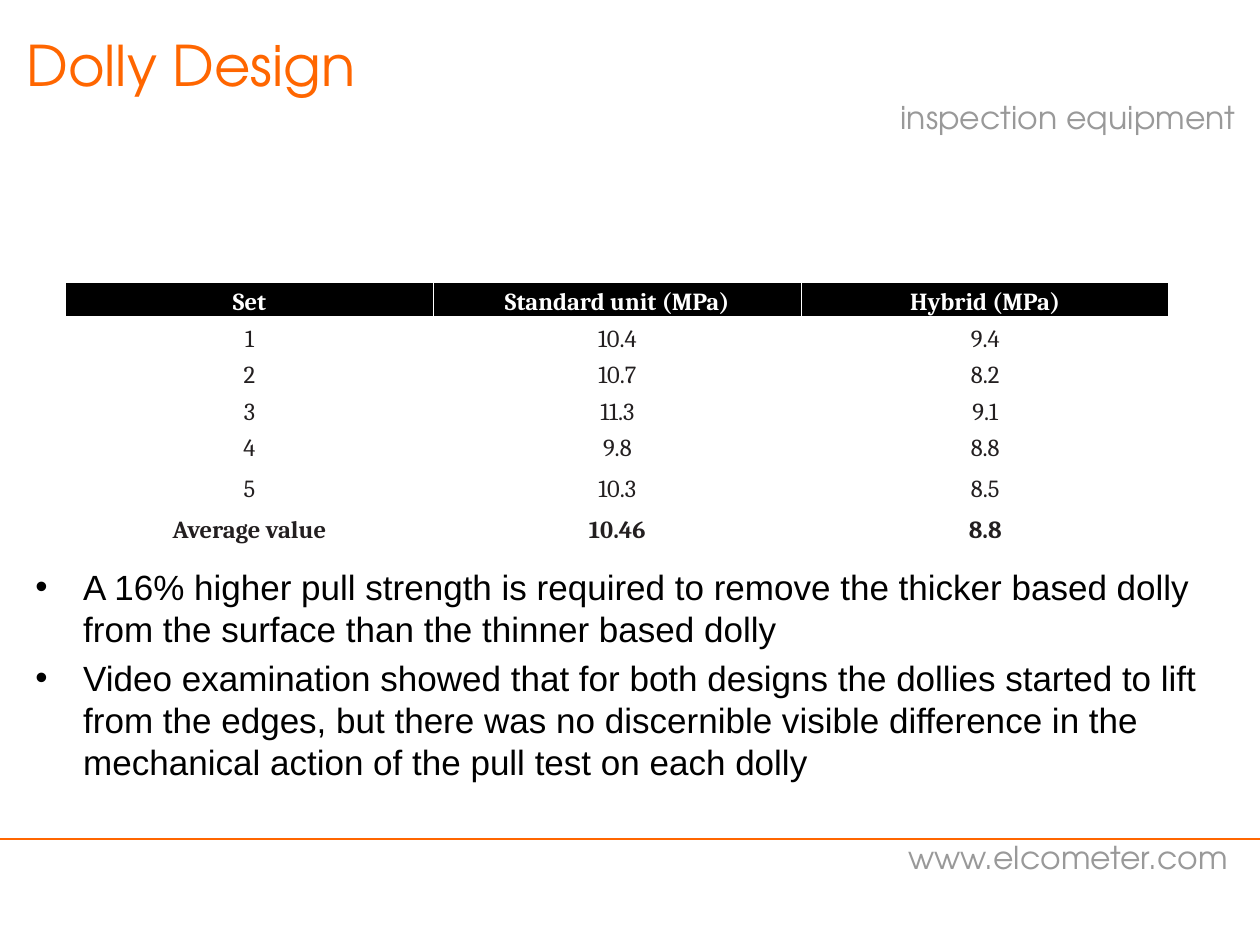
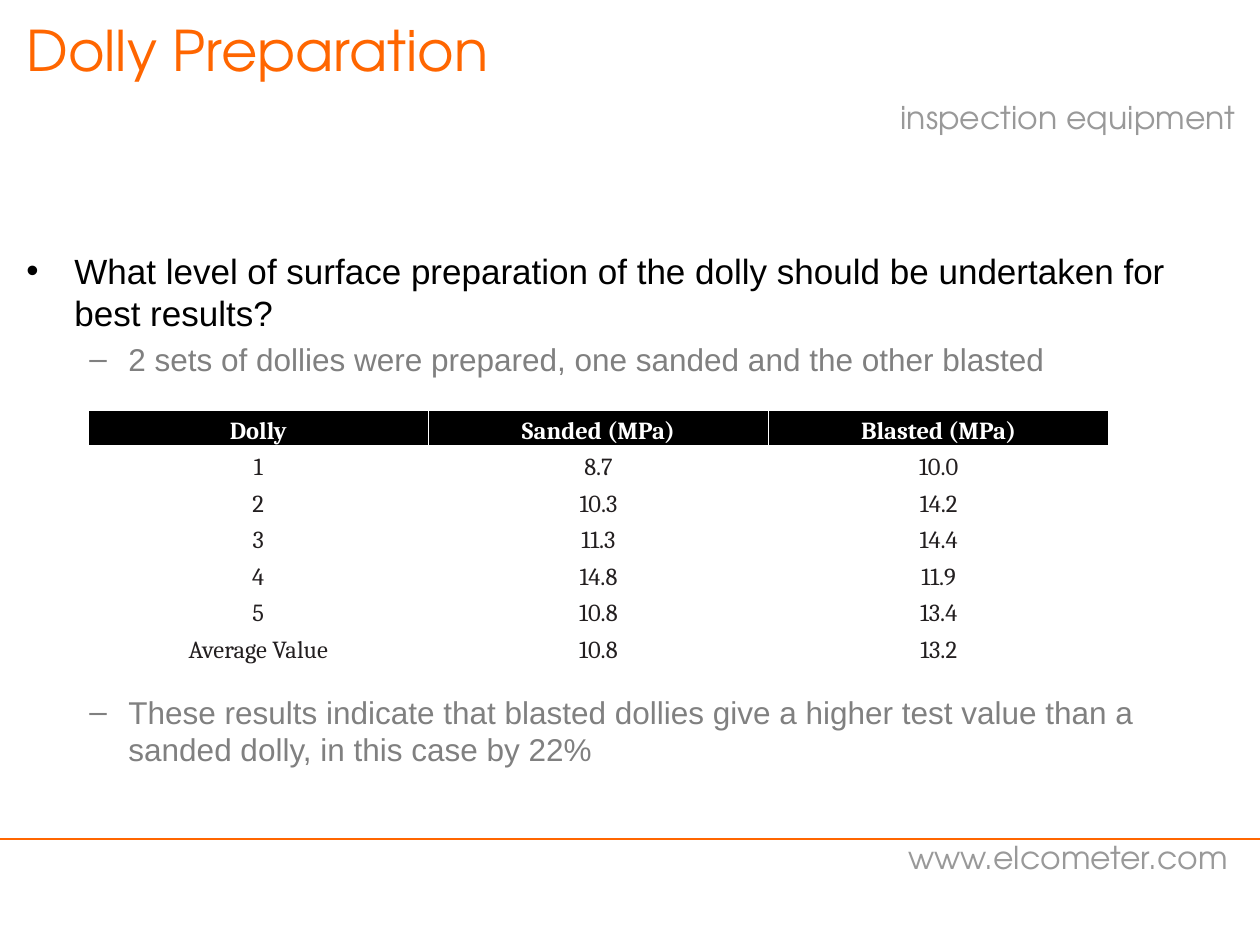
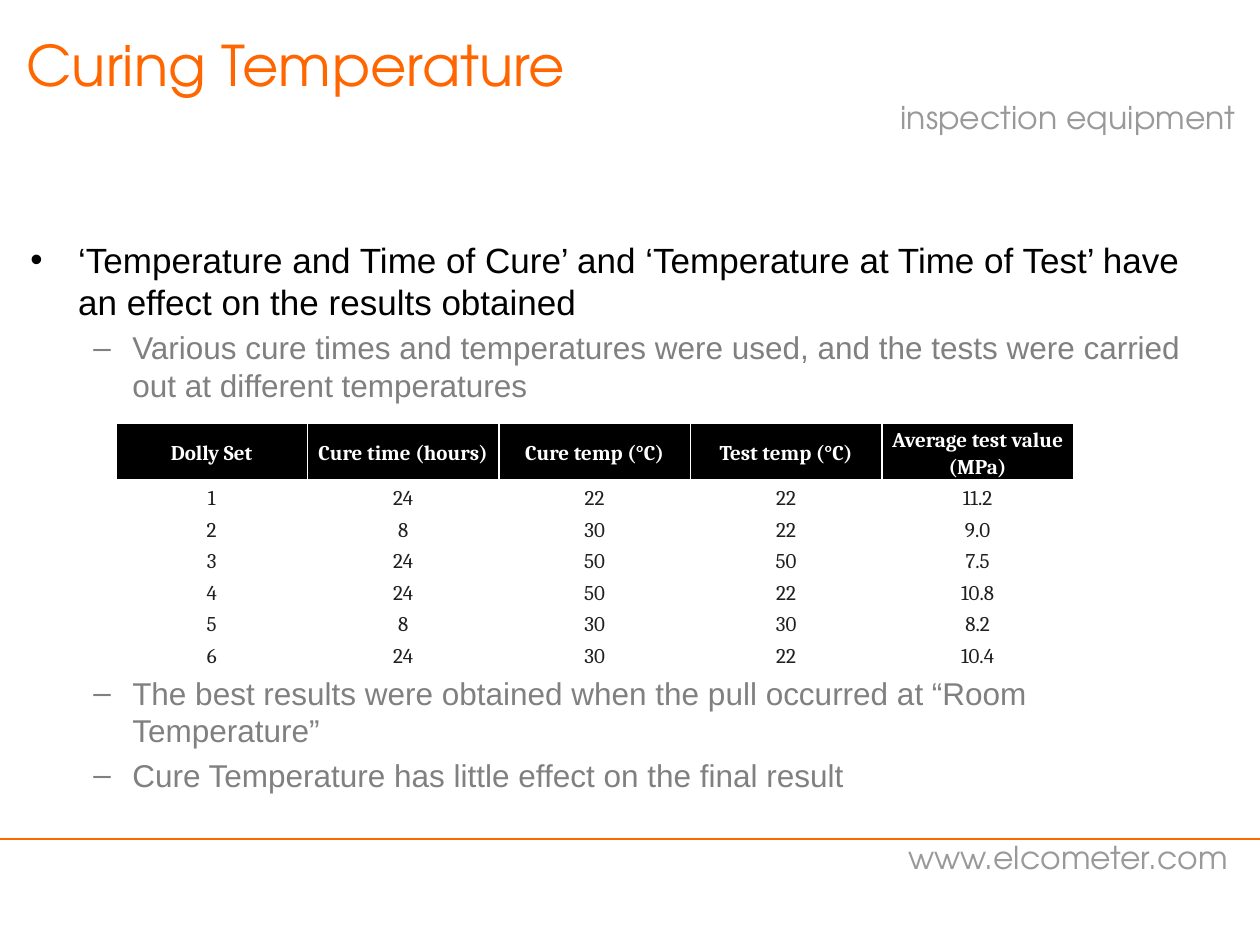
import pptx
import pptx.util
import pptx.dml.color
import pptx.enum.shapes
import pptx.enum.text
import pptx.oxml
import pptx.oxml.ns

Inch, Pt = pptx.util.Inches, pptx.util.Pt
MSO, ALIGN = pptx.enum.text.MSO_ANCHOR, pptx.enum.text.PP_ALIGN

# Shared look
WIDE, HIGH = 10, 7.5
ORANGE, GREY, SUB, BLACK, WHITE, INK = (
    "FF6600", "999999", "808080", "000000", "FFFFFF", "231F20")
BRAND, BODY, SERIF = "TeX Gyre Adventor", "Arial", "Cambria"
RULE = 6.66
LABELS = [("inspection equipment", 7.05, 0.73), ("www.elcometer.com", 7.11, 6.6)]
# Per list level: bullet, left indent, hanging indent, size, colour
LEVELS = [("•", 0.38, 0.38, 20, BLACK), ("–", 0.81, 0.31, 18, SUB)]

# Content: each point is (level, text, gap before in points or None for 20 %)
SLIDES = [
    dict(
        title="Dolly Design", head=(0.11, 0.19, 9.79, 1.18),
        body=(0.18, 2.34, 9.61, 4.96), drop=2.15,
        points=[
            (0, "A 16% higher pull strength is required to remove the thicker based "
                "dolly from the surface than the thinner based dolly", None),
            (0, "Video examination showed that for both designs the dollies started "
                "to lift from the edges, but there was no discernible visible "
                "difference in the mechanical action of the pull test on each dolly",
             None)],
        at=(0.52, 2.24), col=2.92, rows=[0.29] * 5 + [0.36, 0.29], size=14, total=True,
        cells=[("Set", "Standard unit (MPa)", "Hybrid (MPa)"),
               ("1", "10.4", "9.4"), ("2", "10.7", "8.2"), ("3", "11.3", "9.1"),
               ("4", "9.8", "8.8"), ("5", "10.3", "8.5"),
               ("Average value", "10.46", "8.8")]),
    dict(
        title="Dolly Preparation", head=(0.11, 0.07, 9.79, 0.84),
        body=(0.11, 1.93, 9.61, 4.48), drop=0.05,
        points=[
            (0, "What level of surface preparation of the dolly should be undertaken "
                "for best results?", None),
            (1, "2 sets of dollies were prepared, one sanded and the other blasted",
             None),
            (1, "These results indicate that blasted dollies give a higher test value "
                "than a sanded dolly, in this case by 22%", 180)],
        at=(0.7, 3.26), col=2.7, rows=[0.29] * 7, size=14, total=False,
        cells=[("Dolly", "Sanded (MPa)", "Blasted (MPa)"),
               ("1", "8.7", "10.0"), ("2", "10.3", "14.2"), ("3", "11.3", "14.4"),
               ("4", "14.8", "11.9"), ("5", "10.8", "13.4"),
               ("Average Value", "10.8", "13.2")]),
    dict(
        title="Curing Temperature", head=(0.11, 0.19, 9.79, 1.18),
        body=(0.14, 1.84, 9.61, 4.96), drop=0.05,
        points=[
            (0, "‘Temperature and Time of Cure’ and ‘Temperature at Time of Test’ "
                "have an effect on the results obtained", None),
            (1, "Various cure times and temperatures were used, and the tests were "
                "carried out at different temperatures", None),
            (1, "The best results were obtained when the pull occurred at “Room "
                "Temperature”", 154),
            (1, "Cure Temperature has little effect on the final result", None)],
        at=(0.92, 3.36), col=1.52, rows=[0.46] + [0.25] * 6, size=12, total=False,
        cells=[("Dolly Set", "Cure time (hours)", "Cure temp (°C)",
                "Test temp (°C)", "Average test value (MPa)"),
               ("1", "24", "22", "22", "11.2"), ("2", "8", "30", "22", "9.0"),
               ("3", "24", "50", "50", "7.5"), ("4", "24", "50", "22", "10.8"),
               ("5", "8", "30", "30", "8.2"), ("6", "24", "30", "22", "10.4")]),
]


def color(hue):
    return pptx.dml.color.RGBColor.from_string(hue)


def style(para, face, size, hue, bold=False):
    for run in para.runs:
        font = run.font
        font.name, font.size, font.bold = face, Pt(size), bold
        font.color.rgb = color(hue)


def place(shape, box):
    shape.left, shape.top, shape.width, shape.height = map(Inch, box)


def node(tag, home, **attrs):
    item = pptx.oxml.parse_xml(f"<a:{tag} {pptx.oxml.ns.nsdecls('a')}/>")
    for key, value in attrs.items():
        item.set(key, str(value))
    home.append(item)
    return item


def add_frame(slide):
    """Tagline, footer rule and web address."""
    for text, left, top in LABELS:
        box = slide.shapes.add_textbox(*map(Inch, (left, top, 2.97, 0.54)))
        box.text_frame.word_wrap = True
        box.text_frame.text = text
        style(box.text_frame.paragraphs[0], BRAND, 18, GREY)
    rule = slide.shapes.add_connector(
        pptx.enum.shapes.MSO_CONNECTOR.STRAIGHT,
        Inch(WIDE), Inch(RULE), Inch(0), Inch(RULE))
    rule.line.color.rgb = color(ORANGE)
    rule.line.width = Pt(0.75)
    node("effectLst", rule.element.spPr)


def add_title(slide, text, box):
    title = slide.shapes.title
    place(title, box)
    frame = title.text_frame
    frame.text = text
    frame.auto_size = pptx.enum.text.MSO_AUTO_SIZE.NONE
    frame.vertical_anchor = MSO.TOP
    frame.paragraphs[0].alignment = ALIGN.LEFT
    style(frame.paragraphs[0], BRAND, 32, ORANGE)


def add_points(slide, points, box, drop):
    body = slide.placeholders[1]
    place(body, box)
    frame = body.text_frame
    frame.auto_size = pptx.enum.text.MSO_AUTO_SIZE.NONE
    frame.margin_top = Inch(drop)
    for i, (level, text, gap) in enumerate(points):
        para = frame.add_paragraph() if i else frame.paragraphs[0]
        para.text = text
        para.level = level
        mark, left, hang, size, hue = LEVELS[level]
        props = para._p.get_or_add_pPr()
        props.set("marL", str(Inch(left)))
        props.set("indent", str(-Inch(hang)))
        node("buChar", props, char=mark)
        para.space_before = Pt((gap or size * 0.2) if i else 0)
        style(para, BODY, size, hue)


def add_border(cell):
    props = cell._tc.get_or_add_tcPr()
    for side, width in zip("LRTB", (1, 1, 1, 3)):
        line = node("ln" + side, props, w=Pt(width))
        node("srgbClr", node("solidFill", line), val=WHITE)


def add_grid(slide, cells, at, col, rows, size, total):
    count = len(cells[0])
    table = slide.shapes.add_table(
        len(cells), count, *map(Inch, (*at, col * count, sum(rows)))).table
    table.horz_banding = False
    for part in table.columns:
        part.width = Inch(col)
    for r, (tall, texts) in enumerate(zip(rows, cells)):
        table.rows[r].height = Inch(tall)
        head = r == 0
        bold = head or (total and r == len(cells) - 1)
        for c, text in enumerate(texts):
            cell = table.cell(r, c)
            cell.text = text
            cell.vertical_anchor = MSO.MIDDLE
            cell.margin_left = cell.margin_right = Inch(0.07)
            cell.margin_top = cell.margin_bottom = 0
            if head:
                add_border(cell)
                cell.fill.solid()
                cell.fill.fore_color.rgb = color(BLACK)
            else:
                cell.fill.background()
            para = cell.text_frame.paragraphs[0]
            para.alignment = ALIGN.CENTER
            para.line_spacing = 1.15
            style(para, SERIF, size, WHITE if head else INK, bold)


def main():
    deck = pptx.Presentation()
    deck.slide_width, deck.slide_height = Inch(WIDE), Inch(HIGH)
    for page in SLIDES:
        slide = deck.slides.add_slide(deck.slide_layouts[1])
        add_frame(slide)
        add_title(slide, page["title"], page["head"])
        add_points(slide, page["points"], page["body"], page["drop"])
        add_grid(slide, *(page[key] for key in
                          ("cells", "at", "col", "rows", "size", "total")))
    deck.save("out.pptx")


if __name__ == "__main__":
    main()
